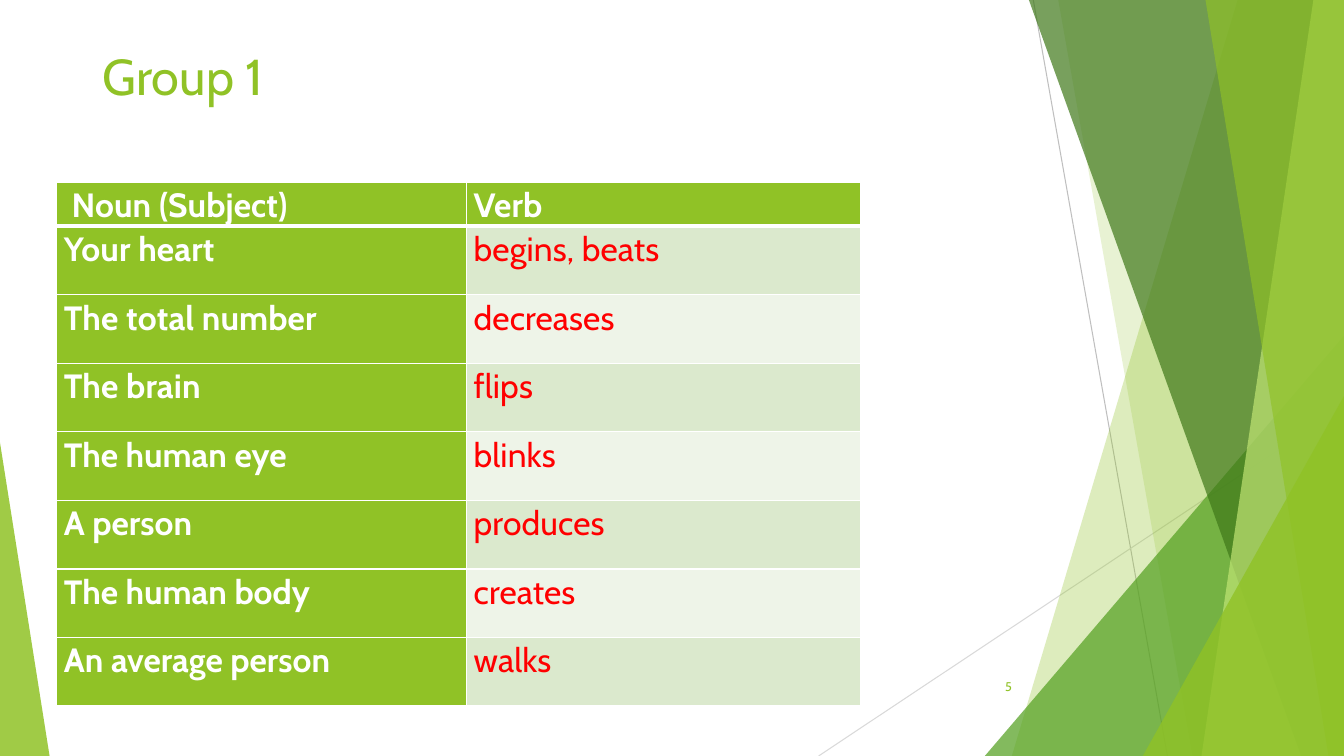
from lxml import etree
from pptx import Presentation
from pptx.dml.color import RGBColor
from pptx.enum.shapes import MSO_CONNECTOR, MSO_SHAPE
from pptx.enum.text import MSO_ANCHOR, PP_ALIGN
from pptx.oxml.ns import qn
from pptx.util import Cm, Pt

LINE = MSO_CONNECTOR.STRAIGHT
WEDGE = MSO_SHAPE.ISOSCELES_TRIANGLE
TOP, MIDDLE = MSO_ANCHOR.TOP, MSO_ANCHOR.MIDDLE
LEFT, RIGHT = PP_ALIGN.LEFT, PP_ALIGN.RIGHT

WIDE, HIGH = 33.87, 19.05
GREEN, WHITE, RED = "90C226", "FFFFFF", "FF0000"
BANDS = ["DBE9CD", "EEF4E8"]
BASE = {"name": "Cabin", "bold": False}
ROWS = [
    (" Noun (Subject)", "Verb"),
    ("Your heart", "begins, beats"),
    ("The total number", "decreases"),
    ("The brain", "flips"),
    ("The human eye", "blinks"),
    ("A person", "produces"),
    ("The human body", "creates"),
    ("An average person", "walks"),
]


def color(code):
    return RGBColor.from_string(code)


def apply(item, values):
    for key, value in values.items():
        setattr(item, key, value)


def place(item, box):
    apply(item, dict(zip(("left", "top", "width", "height"), map(Cm, box))))


def write(frame, text, size, code, align=LEFT, **style):
    para = frame.paragraphs[0]
    para.alignment = align
    run = para.add_run()
    run.text = text
    apply(run.font, {**BASE, "size": Pt(size), **style})
    run.font.color.rgb = color(code)
    return para, run


def paint(shape, code, alpha):
    shape.shadow.inherit = False
    shape.fill.solid()
    shape.fill.fore_color.rgb = color(code)
    shape.line.fill.background()
    tint = shape.fill._xPr.find(qn("a:solidFill"))[0]
    etree.SubElement(tint, qn("a:alpha"), val=str(alpha * 1000))


def add_ray(shapes, start, end, code):
    ray = shapes.add_connector(LINE, *map(Cm, start + end))
    ray.line.color.rgb = color(code)
    ray.line.width = Pt(0.75)
    etree.SubElement(ray._element.spPr, qn("a:effectLst"))


def add_panel(shapes, box, high, low, code, alpha):
    left, top, wide, tall = box
    right, base = left + wide, top + tall
    points = [(high, top), (right, top), (right, base), (low, base)]
    points = [(Cm(x), Cm(y)) for x, y in points]
    form = shapes.build_freeform(*points[0])
    form.add_line_segments(points[1:], close=True)
    paint(form.convert_to_shape(), code, alpha)


def add_wedge(shapes, box, peak, code, alpha):
    wedge = shapes.add_shape(WEDGE, *map(Cm, box))
    wedge.adjustments[0] = peak
    paint(wedge, code, alpha)


def add_decor(shapes, box):
    left, top, wide, tall = box
    right, base = left + wide, top + tall

    def corner(width, height):
        return right - width, base - height, width, height

    add_ray(shapes, (right - 7.83, top), (right - 4.45, base), "BFBFBF")
    add_ray(shapes, (right, base - 8.81), (right - 13.24, base), "D9D9D9")
    add_panel(shapes, box, right - 2.68, right - 8.37, GREEN, 30)
    add_panel(shapes, box, right - 7.2, right - 3.82, GREEN, 20)
    add_wedge(shapes, corner(9.05, 10.59), 1, "54A021", 72)
    add_panel(shapes, box, right - 7.94, right - 1.08, "3F7819", 70)
    add_panel(shapes, box, right - 0.77, right - 3.59, "C0E474", 70)
    add_panel(shapes, box, right - 3.49, right - 0.39, GREEN, 65)
    add_wedge(shapes, corner(5.07, 9.07), 1, GREEN, 80)
    add_wedge(shapes, (left, base - 7.9, 1.25, 7.9), 0, GREEN, 85)


def add_title(shapes, box):
    title = shapes.title
    shapes._spTree.append(title._element)
    place(title, box)
    title.text_frame.vertical_anchor = TOP
    write(title.text_frame, "Group 1", 36, GREEN)


def edge(cell, first):
    props = cell._tc.get_or_add_tcPr()
    for spot, side in enumerate("LRTB"):
        thick = 3 if first and side == "B" else 1
        line = etree.Element(qn("a:ln" + side), w=str(Pt(thick)))
        fill = etree.SubElement(line, qn("a:solidFill"))
        etree.SubElement(fill, qn("a:srgbClr"), val=WHITE)
        props.insert(spot, line)


def fill_cell(cell, text, row, col):
    head = row == 0 or col == 0
    apply(cell, {"margin_left": Cm(0.18), "margin_right": Cm(0.18),
                 "margin_top": 0, "margin_bottom": 0})
    cell.fill.solid()
    cell.fill.fore_color.rgb = color(GREEN if head else BANDS[(row - 1) % 2])
    edge(cell, row == 0)
    para, run = write(cell.text_frame, text, 24, WHITE if head else RED, bold=head)
    para.line_spacing = 1.07
    if col or row < 4:
        run.font._element.set("spc", "10")


def add_grid(shapes, box):
    grid = shapes.add_table(len(ROWS), 2, *map(Cm, box)).table
    left, top, wide, tall = box
    first = 0.91
    for col, part in zip(grid.columns, (0.51, 0.49)):
        col.width = Cm(wide * part)
    for row, texts in enumerate(ROWS):
        step = (tall - first) / (len(ROWS) - 1)
        grid.rows[row].height = Cm(step if row else first)
        for col, text in enumerate(texts):
            fill_cell(grid.cell(row, col), text, row, col)


def add_page(shapes, box):
    frame = shapes.add_textbox(*map(Cm, box)).text_frame
    apply(frame, {"word_wrap": True, "vertical_anchor": MIDDLE})
    write(frame, "5", 9, GREEN, RIGHT)


def main():
    deck = Presentation()
    apply(deck, {"slide_width": Cm(WIDE), "slide_height": Cm(HIGH)})
    shapes = deck.slides.add_slide(deck.slide_layouts[5]).shapes
    add_decor(shapes, (0, 0, WIDE, HIGH))
    add_title(shapes, (2.34, 1.02, 28.04, 2.36))
    add_grid(shapes, (1.43, 4.6, 20.25, 13))
    add_page(shapes, (23.85, 16.79, 1.9, 1.02))
    deck.save("out.pptx")


if __name__ == "__main__":
    main()
